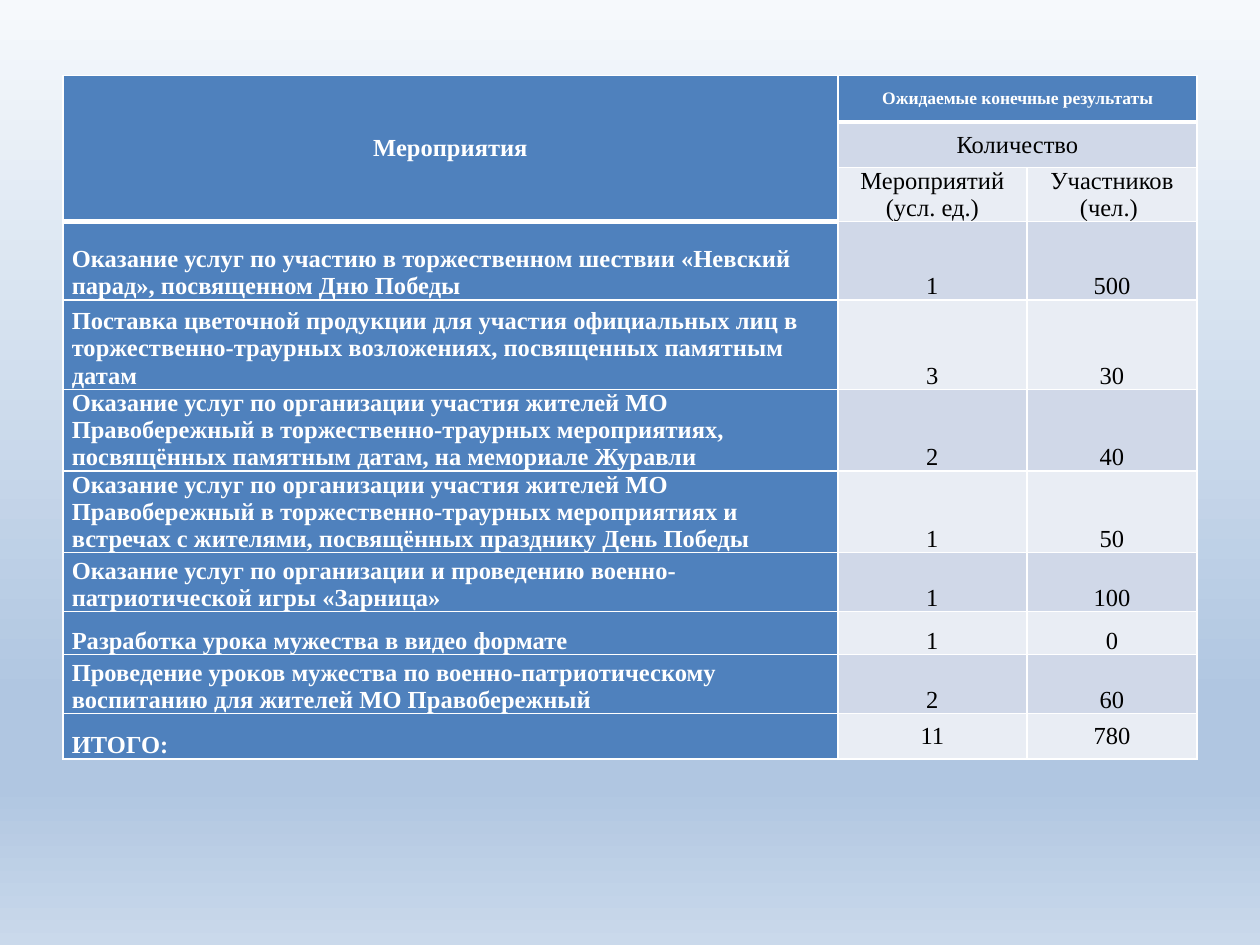
"""Build a slide with a table of commemorative events and their expected results."""
from dataclasses import dataclass

from lxml.etree import SubElement
from pptx import Presentation
from pptx.dml.color import RGBColor
from pptx.enum.text import MSO_ANCHOR, PP_ALIGN
from pptx.oxml.ns import qn
from pptx.util import Inches, Pt


@dataclass(frozen=True)
class Theme:
    font: str = "Times New Roman"
    body_size: int = 14
    small_size: int = 10
    accent: str = "4F81BD"
    bands: tuple = ("E9EDF4", "D0D8E8")
    light: str = "FFFFFF"
    dark: str = "000000"
    thin: int = 1
    thick: int = 3
    backdrop: tuple = ((0, "F6F9FC"), (74, "B0C6E1"), (83, "B0C6E1"), (100, "CAD9EB"))


theme = Theme()


def write(cell, text, size=theme.body_size, color=theme.dark, bold=False,
          align=PP_ALIGN.CENTER, anchor=MSO_ANCHOR.MIDDLE):
    cell.vertical_anchor = anchor
    paragraph = cell.text_frame.paragraphs[0]
    paragraph.alignment = align
    run = paragraph.add_run()
    run.text = text
    run.font.name = theme.font
    run.font.size = Pt(size)
    run.font.bold = bold
    run.font.color.rgb = RGBColor.from_string(color)


def paint(cell, fill, top, bottom):
    cell.margin_left = cell.margin_right = Inches(0.07)
    cell.margin_top = cell.margin_bottom = 0
    properties = cell._tc.get_or_add_tcPr()
    for side, width in (("L", theme.thin), ("R", theme.thin), ("T", top), ("B", bottom)):
        line = SubElement(properties, qn(f"a:ln{side}"), w=str(Pt(width)))
        solid = SubElement(line, qn("a:solidFill"))
        SubElement(solid, qn("a:srgbClr"), val=theme.light)
    cell.fill.solid()
    cell.fill.fore_color.rgb = RGBColor.from_string(fill)


events = [
    ("Оказание услуг по участию в торжественном шествии «Невский парад», "
     "посвященном Дню Победы", 1, 500),
    ("Поставка цветочной продукции для участия официальных лиц в "
     "торжественно-траурных возложениях, посвященных памятным датам", 3, 30),
    ("Оказание услуг по организации участия жителей МО Правобережный в "
     "торжественно-траурных мероприятиях, посвящённых памятным датам, "
     "на мемориале Журавли", 2, 40),
    ("Оказание услуг по организации участия жителей МО Правобережный в "
     "торжественно-траурных мероприятиях и встречах с жителями, "
     "посвящённых празднику День Победы", 1, 50),
    ("Оказание услуг по организации и проведению военно-патриотической "
     "игры «Зарница»", 1, 100),
    ("Разработка урока мужества в видео формате", 1, 0),
    ("Проведение уроков мужества по военно-патриотическому воспитанию "
     "для жителей МО Правобережный", 2, 60),
    ("ИТОГО:", 11, 780),
]
column_widths = [6.15, 1.5, 1.35]
row_heights = [0.37, 0.36, 0.43, 0.62, 0.71, 0.65, 0.64, 0.47, 0.34, 0.47, 0.36]
header_rows = 3
thick_below = {(0, 0), (2, 0), (0, 1), (0, 2)}

presentation = Presentation()
presentation.slide_width = Inches(10)
presentation.slide_height = Inches(7.5)
slide = presentation.slides.add_slide(presentation.slide_layouts[6])

backdrop = slide.background.fill
backdrop.gradient()
backdrop.gradient_angle = 270
stops = slide.element.find(f".//{qn('a:gsLst')}")
for stop in list(stops):
    stops.remove(stop)
for percent, color in theme.backdrop:
    stop = SubElement(stops, qn("a:gs"), pos=str(percent * 1000))
    SubElement(stop, qn("a:srgbClr"), val=color)

results = slide.shapes.add_table(
    len(row_heights), len(column_widths), Inches(0.5), Inches(0.6),
    Inches(sum(column_widths)), Inches(sum(row_heights))).table
for column, width in zip(results.columns, column_widths):
    column.width = Inches(width)
for row, height in zip(results.rows, row_heights):
    row.height = Inches(height)

for r in range(len(row_heights)):
    for c in range(len(column_widths)):
        fill = theme.accent if r == 0 or c == 0 else theme.bands[r % 2]
        top = theme.thick if (r - 1, c) in thick_below else theme.thin
        bottom = theme.thick if (r, c) in thick_below else theme.thin
        paint(results.cell(r, c), fill, top, bottom)

results.cell(0, 0).merge(results.cell(2, 0))
results.cell(0, 1).merge(results.cell(0, 2))
results.cell(1, 1).merge(results.cell(1, 2))
write(results.cell(0, 0), "Мероприятия", color=theme.light, bold=True)
write(results.cell(0, 1), "Ожидаемые конечные результаты",
      size=theme.small_size, color=theme.light, bold=True)
write(results.cell(1, 1), "Количество")
write(results.cell(2, 1), "Мероприятий (усл. ед.)")
write(results.cell(2, 2), "Участников (чел.) ")

for r, (event, *counts) in enumerate(events, header_rows):
    write(results.cell(r, 0), event, color=theme.light, bold=True,
          align=PP_ALIGN.LEFT, anchor=MSO_ANCHOR.BOTTOM)
    is_total = r == len(row_heights) - 1
    for c, count in enumerate(counts, 1):
        write(results.cell(r, c), str(count),
              anchor=MSO_ANCHOR.MIDDLE if is_total else MSO_ANCHOR.BOTTOM)

presentation.save("out.pptx")
